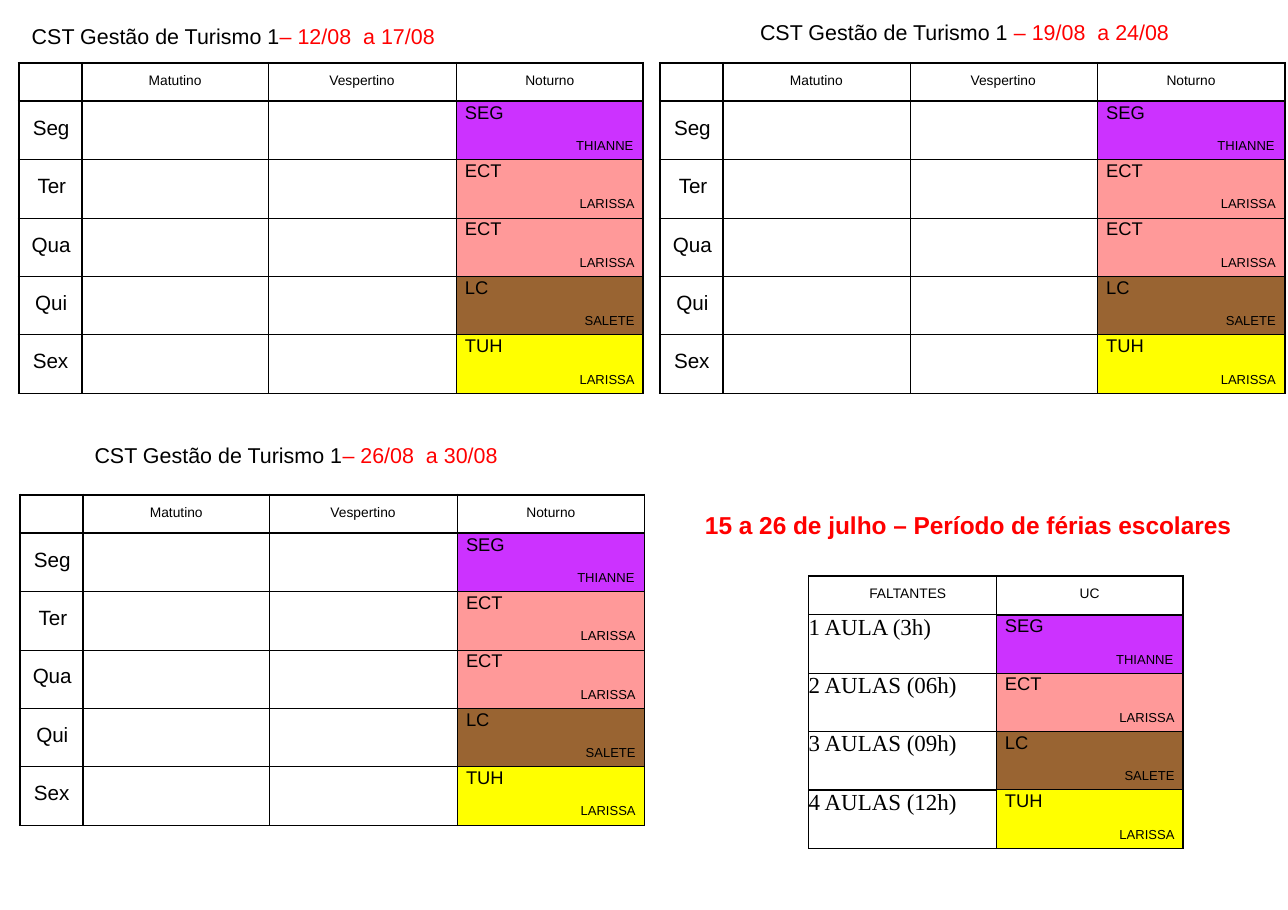
"""Build the class timetable slide for three weeks of the Gestão de Turismo course."""
import pptx
import pptx.util
import pptx.dml.color
import pptx.enum.text
import pptx.oxml.ns
import lxml.etree

Inches, Pt = pptx.util.Inches, pptx.util.Pt
ALIGN = pptx.enum.text.PP_ALIGN
BLACK, RED = "000000", "FF0000"

COURSE = "CST Gestão de Turismo 1"
TITLES = [
    (0.18, 0.16, 3.9, COURSE, "– 12/08  a 17/08"),
    (6.79, 0.12, 3.96, COURSE + " ", "– 19/08  a 24/08"),
    (0.75, 3.96, 3.9, COURSE, "– 26/08  a 30/08"),
]
BREAK = "15 a 26 de julho – Período de férias escolares"
WEEKS = [(0.17, 0.57), (5.99, 0.57), (0.18, 4.49)]
SHIFTS = ["Matutino", "Vespertino", "Noturno"]
DAYS = [("Seg", 0.11), ("Ter", 0.14), ("Qua", 0.1), ("Qui", 0.13), ("Sex", 0.12)]
UNITS = {
    "SEG": ("THIANNE", "CC32FF", 10.5),
    "ECT": ("LARISSA", "FF9999", 10.3),
    "LC": ("SALETE", "996432", 10.5),
    "TUH": ("LARISSA", "FFFF00", 10.3),
}
PLAN = ["SEG", "ECT", "ECT", "LC", "TUH"]
LEFT = ["1 AULA (3h)", "2 AULAS (06h)", "3 AULAS (09h)", "4 AULAS (12h)"]

HEAD, ROW, DAY, WIDE = 0.35, 0.53, 0.57, 1.7
THIN, THICK = 0.75, 1.5
FONTS = {
    "title": {"size": Pt(14), "name": "Arial"},
    "break": {"size": Pt(16), "name": "Arial", "bold": True},
    "head": {"size": Pt(9), "name": "Arial"},
    "day": {"size": Pt(13.5), "name": "Arial"},
    "unit": {"size": Pt(12), "name": "Arial"},
    "staff": {"size": Pt(8.5), "name": "Arial"},
    "count": {"size": Pt(15), "name": "Times New Roman"},
}


def color(code):
    return pptx.dml.color.RGBColor.from_string(code)


def write(para, text, font, tint=BLACK, left=0, right=0, **style):
    run = para.add_run()
    run.text = text
    for key, value in FONTS[font].items():
        setattr(run.font, key, value)
    run.font.color.rgb = color(tint)
    for key, value in style.items():
        setattr(para, key, value)
    props = para._p.get_or_add_pPr()
    for key, value in (("marL", left), ("marR", right)):
        if value:
            props.set(key, str(Inches(value)))


def label(slide, box, runs, font, left=0):
    frame = slide.shapes.add_textbox(*map(Inches, box)).text_frame
    frame.word_wrap = False
    frame.auto_size = pptx.enum.text.MSO_AUTO_SIZE.SHAPE_TO_FIT_TEXT
    for text, tint in runs:
        write(frame.paragraphs[0], text, font, tint, left)


def edge(cell, side, width):
    name = pptx.oxml.ns.qn
    line = lxml.etree.SubElement(cell._tc.get_or_add_tcPr(), name("a:ln" + side), w=str(Pt(width)))
    fill = lxml.etree.SubElement(line, name("a:solidFill"))
    lxml.etree.SubElement(fill, name("a:srgbClr"), val=BLACK)


def grid(slide, spot, cols, rows, upright, level):
    """Add a bare table; upright and level hold the thick edges."""
    size = (sum(cols), sum(rows))
    table = slide.shapes.add_table(len(rows), len(cols), *map(Inches, spot + size)).table
    table.first_row = table.horz_banding = False
    for part, width in zip(table.columns, cols):
        part.width = Inches(width)
    for part, height in zip(table.rows, rows):
        part.height = Inches(height)
    for r in range(len(rows)):
        for c in range(len(cols)):
            cell = table.cell(r, c)
            for side in ("left", "right", "top", "bottom"):
                setattr(cell, "margin_" + side, 0)
            heavy = {"L": c in upright, "R": c + 1 in upright,
                     "T": (r, c) in level, "B": (r + 1, c) in level}
            for side, thick in heavy.items():
                edge(cell, side, THICK if thick else THIN)
            cell.fill.background()
    return table


def put(cell, text, font, top=0, **style):
    cell.margin_top = Inches(top)
    write(cell.text_frame.paragraphs[0], text, font, **style)


def header(cell, text, left=0):
    put(cell, text, "head", 0.09, left=left, alignment=ALIGN.LEFT if left else ALIGN.CENTER)


def lesson(cell, unit):
    staff, tint, gap = UNITS[unit]
    put(cell, unit, "unit", 0.01, left=0.08)
    place = {"left": 1.09} if unit == "SEG" else {"right": 0.08, "alignment": ALIGN.RIGHT}
    write(cell.text_frame.add_paragraph(), staff, "staff", space_before=Pt(gap), **place)
    cell.fill.solid()
    cell.fill.fore_color.rgb = color(tint)


def week(slide, spot):
    level = {(r, c) for r in (0, 1) for c in range(4)}
    table = grid(slide, spot, [DAY] + [WIDE] * 3, [HEAD] + [ROW] * 5, {0, 1, 4}, level)
    for c, shift in enumerate(SHIFTS, 1):
        header(table.cell(0, c), shift, 0.55 if c == 2 else 0)
    for r, ((day, gap), unit) in enumerate(zip(DAYS, PLAN), 1):
        put(table.cell(r, 0), day, "day", 0.14, right=gap, alignment=ALIGN.RIGHT)
        lesson(table.cell(r, 3), unit)


def missing(slide):
    level = {(0, 0), (0, 1), (1, 1), (4, 0)}
    table = grid(slide, (7.34, 5.23), [WIDE] * 2, [HEAD] + [ROW] * 4, {2}, level)
    header(table.cell(0, 0), "FALTANTES", 0.55)
    header(table.cell(0, 1), "UC")
    for r, (count, unit) in enumerate(zip(LEFT, UNITS), 1):
        put(table.cell(r, 0), count, "count")
        lesson(table.cell(r, 1), unit)


def main():
    deck = pptx.Presentation()
    deck.slide_width, deck.slide_height = Inches(11.69), Inches(8.26)
    slide = deck.slides.add_slide(deck.slide_layouts[6])
    missing(slide)
    for spot in WEEKS:
        week(slide, spot)
    for x, y, width, course, dates in TITLES:
        label(slide, (x, y, width, 0.34), [(course, BLACK), (dates, RED)], "title", 0.01)
    label(slide, (6.3, 4.58, 5.04, 0.37), [(BREAK, RED)], "break")
    deck.save("out.pptx")


if __name__ == "__main__":
    main()
